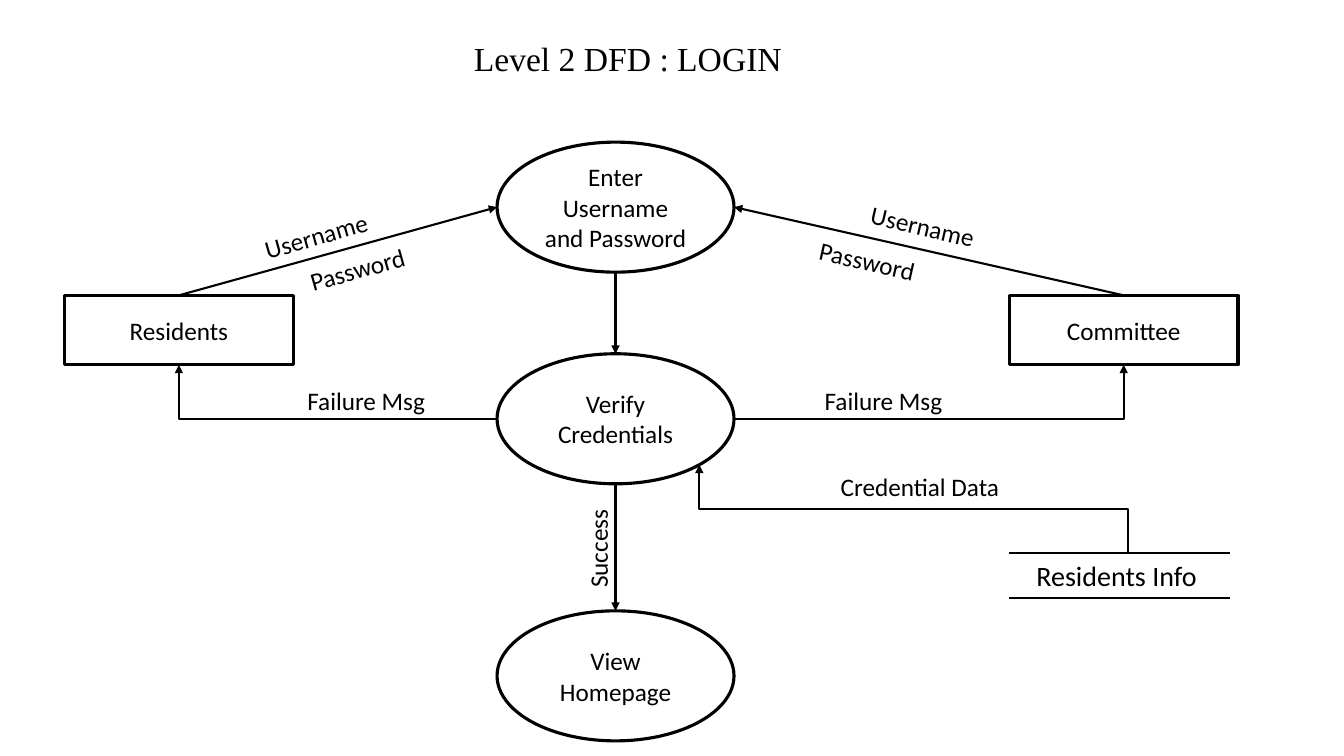
import math

import pptx
import pptx.dml.color
import pptx.enum.shapes
import pptx.enum.text
import pptx.oxml
import pptx.oxml.ns
import pptx.util
from pptx.util import Inches

BLACK = pptx.dml.color.RGBColor(0, 0, 0)
WHITE = pptx.dml.color.RGBColor(255, 255, 255)
SHAPES = pptx.enum.shapes.MSO_SHAPE
CONNECTORS = pptx.enum.shapes.MSO_CONNECTOR
ANCHOR = pptx.enum.text.MSO_ANCHOR
ALIGN = pptx.enum.text.PP_ALIGN
AUTOSIZE = pptx.enum.text.MSO_AUTO_SIZE

ELLIPSE_SITES = {"top": 0, "left": 2, "bottom": 4, "lower right": 5, "right": 6}
BOX_SITES = {"top": 0, "left": 1, "bottom": 2, "right": 3}


def write(frame, text, size=18, font="Calibri", align=ALIGN.LEFT, anchor=ANCHOR.TOP):
    frame.word_wrap = True
    frame.vertical_anchor = anchor
    paragraph = frame.paragraphs[0]
    paragraph.alignment = align
    run = paragraph.add_run()
    run.text = text
    run.font.size = pptx.util.Pt(size)
    run.font.name = font
    run.font.color.rgb = BLACK


def add_title(slide, left, top, width, height, text):
    title = slide.shapes.title
    title.left, title.top = Inches(left), Inches(top)
    title.width, title.height = Inches(width), Inches(height)
    write(title.text_frame, text, 24, "Times New Roman")
    title.text_frame.auto_size = AUTOSIZE.NONE


def add_node(slide, kind, left, top, width, height, text):
    node = slide.shapes.add_shape(
        kind, Inches(left), Inches(top), Inches(width), Inches(height))
    node.shadow.inherit = False
    node.fill.solid()
    node.fill.fore_color.rgb = WHITE
    node.line.color.rgb = BLACK
    node.line.width = pptx.util.Pt(2.25)
    write(node.text_frame, text, align=ALIGN.CENTER, anchor=ANCHOR.MIDDLE)
    return node


def add_process(slide, top, text):
    return add_node(slide, SHAPES.OVAL, 4.93, top, 2.35, 1.29, text)


def add_entity(slide, left, text):
    return add_node(slide, SHAPES.RECTANGLE, left, 2.93, 2.27, 0.69, text)


def add_label(slide, left, top, width, height, text, rotation=0, size=18):
    label = slide.shapes.add_textbox(
        Inches(left), Inches(top), Inches(width), Inches(height))
    label.rotation = rotation
    write(label.text_frame, text, size)
    label.text_frame.auto_size = AUTOSIZE.SHAPE_TO_FIT_TEXT


def add_line(slide, kind, start, end, arrow=True):
    line = slide.shapes.add_connector(kind, *start, *end)
    line.line.color.rgb = BLACK
    line.line.width = pptx.util.Pt(1.5)
    if arrow:
        line.line._get_or_add_ln().append(pptx.oxml.parse_xml(
            f'<a:tailEnd {pptx.oxml.ns.nsdecls("a")} type="triangle"/>'))
    line._element.spPr.append(pptx.oxml.parse_xml(
        f'<a:effectLst {pptx.oxml.ns.nsdecls("a")}/>'))
    return line


def site_index(node, side):
    is_ellipse = node.auto_shape_type == SHAPES.OVAL
    return (ELLIPSE_SITES if is_ellipse else BOX_SITES)[side]


def site_point(node, side):
    diagonal = math.sqrt(0.5)
    across, down = {
        "top": (0, -1), "bottom": (0, 1), "left": (-1, 0), "right": (1, 0),
        "lower right": (diagonal, diagonal)}[side]
    return (round(node.left + node.width * (1 + across) / 2),
            round(node.top + node.height * (1 + down) / 2))


def glue(flow, tag, node, side):
    flow._element.nvCxnSpPr.cNvCxnSpPr.append(pptx.oxml.parse_xml(
        f'<a:{tag} {pptx.oxml.ns.nsdecls("a")} id="{node.shape_id}" '
        f'idx="{site_index(node, side)}"/>'))


def add_flow(slide, source, source_side, target, target_side, corner=False):
    kind = CONNECTORS.ELBOW if corner else CONNECTORS.STRAIGHT
    flow = add_line(slide, kind, site_point(source, source_side),
                    site_point(target, target_side))
    if corner:
        flow._element.spPr.prstGeom.set("prst", "bentConnector2")
    glue(flow, "stCxn", source, source_side)
    glue(flow, "endCxn", target, target_side)


def add_store_flow(slide, start, target, side):
    end = site_point(target, side)
    middle_x, middle_y = (start[0] + end[0]) // 2, (start[1] + end[1]) // 2
    half_run, half_rise = (start[0] - end[0]) // 2, (start[1] - end[1]) // 2
    flow = add_line(slide, CONNECTORS.ELBOW,
                    (middle_x - half_rise, middle_y + half_run),
                    (middle_x + half_rise, middle_y - half_run))
    flow._element.spPr.xfrm.set("rot", str(270 * 60000))
    glue(flow, "endCxn", target, side)


def add_store(slide, left, top, width, height, text):
    for y in (top, top + height):
        add_line(slide, CONNECTORS.STRAIGHT, (Inches(left), Inches(y)),
                 (Inches(left + width), Inches(y)), arrow=False)
    add_label(slide, left + 0.17, top, width - 0.17, height, text, size=20)


def add_login_diagram(slide):
    enter = add_process(slide, 1.41, "Enter Username and Password")
    verify = add_process(slide, 3.51, "Verify Credentials")
    homepage = add_process(slide, 6.06, "View Homepage")
    residents = add_entity(slide, 0.64, "Residents")
    committee = add_entity(slide, 10.01, "Committee")

    add_flow(slide, enter, "bottom", verify, "top")
    add_flow(slide, verify, "bottom", homepage, "top")
    for entity, side in ((residents, "left"), (committee, "right")):
        add_flow(slide, entity, "top", enter, side)
        add_flow(slide, verify, side, entity, "bottom", corner=True)

    add_store(slide, 10.01, 5.49, 2.19, 0.44, "Residents Info")
    add_store_flow(slide, (Inches(11.19), Inches(5.49)), verify, "lower right")

    for left, top, text, rotation in (
            (2.51, 2.12, "Username", -15.8),
            (2.96, 2.44, "Password", -15.8),
            (8.53, 2.06, "Username", 13.2),
            (8.02, 2.41, "Password", 12.7),
            (2.95, 3.77, "Failure Msg", 0),
            (8.08, 3.77, "Failure Msg", 0),
            (5.24, 5.04, "Success", 270)):
        add_label(slide, left, top, 1.38, 0.4, text, rotation)
    add_label(slide, 8.24, 4.63, 2.09, 0.4, "Credential Data")


def main():
    deck = pptx.Presentation()
    deck.slide_width, deck.slide_height = Inches(13.33), Inches(7.5)
    slide = deck.slides.add_slide(deck.slide_layouts[5])
    add_title(slide, 4.6, 0.33, 7.68, 0.5, "Level 2 DFD : LOGIN")
    add_login_diagram(slide)
    deck.save("out.pptx")


if __name__ == "__main__":
    main()
